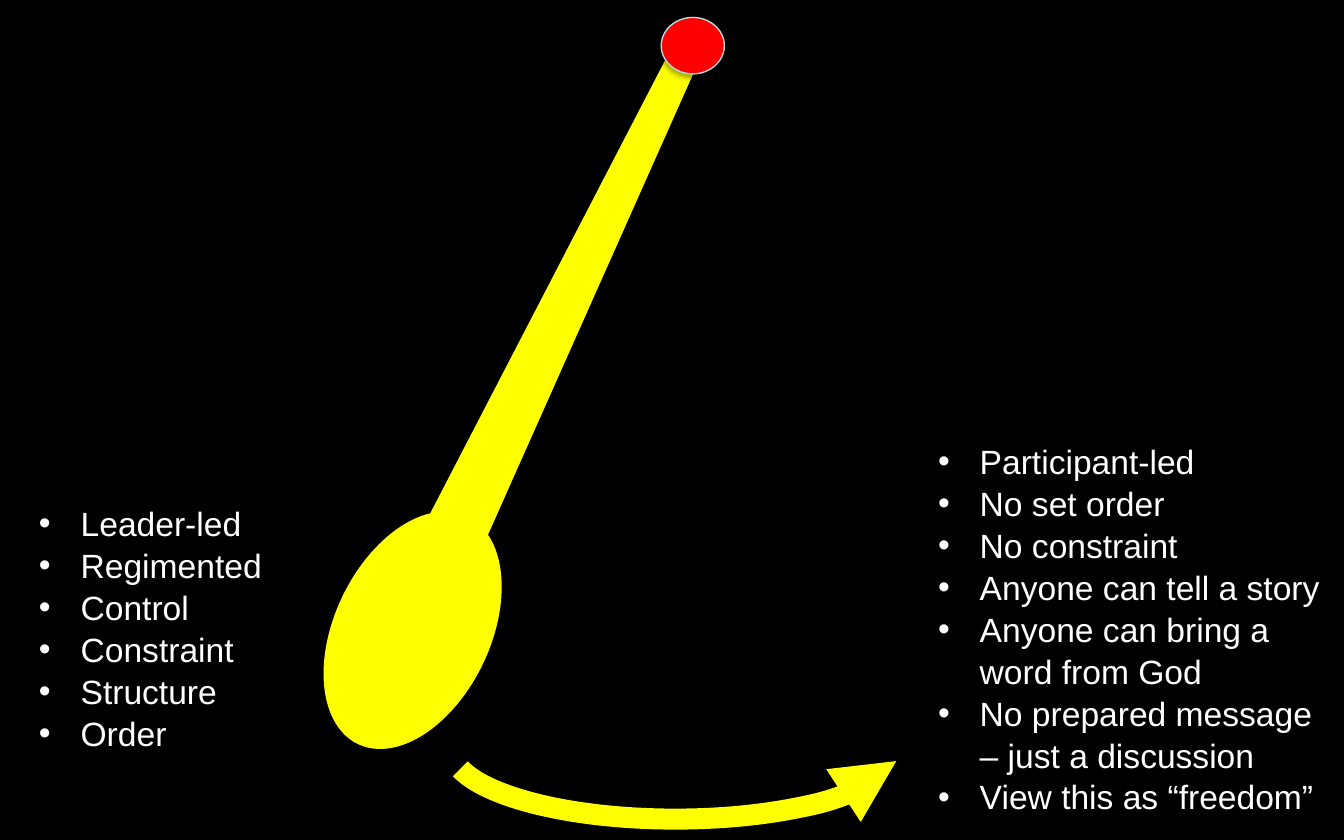
import pptx
import pptx.dml.color
import pptx.enum.shapes
import pptx.enum.text
import pptx.oxml
import pptx.oxml.ns
import pptx.util
import lxml.etree

Inches = pptx.util.Inches
Pt = pptx.util.Pt
SHAPES = pptx.enum.shapes.MSO_SHAPE

COLORS = {
    "background": "000000",
    "pendulum": "FFFF00",
    "pivot": "FF0000",
    "pivot_edge": "B6DCDF",
    "text": "FFFFFF",
}

LEADER_TRAITS = [
    "Leader-led",
    "Regimented",
    "Control",
    "Constraint",
    "Structure",
    "Order",
]
PARTICIPANT_TRAITS = [
    "Participant-led",
    "No set order",
    "No constraint",
    "Anyone can tell a story",
    "Anyone can bring a word from God",
    "No prepared message – just a discussion",
    "View this as “freedom”",
]
SWING_ANGLE = 25.7


def rgb(name):
    return pptx.dml.color.RGBColor.from_string(COLORS[name])


def write_bullet(paragraph, text, size=18, font="Arial", color="text", indent=0.31, spacing=1.04):
    properties = paragraph._p.get_or_add_pPr()
    properties.set("marL", str(Inches(indent)))
    properties.set("indent", str(-Inches(indent)))
    bullet_font = lxml.etree.SubElement(properties, pptx.oxml.ns.qn("a:buFont"))
    bullet_font.set("typeface", font)
    bullet = lxml.etree.SubElement(properties, pptx.oxml.ns.qn("a:buChar"))
    bullet.set("char", "•")
    paragraph.line_spacing = spacing
    paragraph.space_before = Pt(0)
    run = paragraph.add_run()
    run.text = text
    run.font.size = Pt(size)
    run.font.name = font
    run.font.color.rgb = rgb(color)


class PendulumSlide:
    def __init__(self, presentation):
        self.slide = presentation.slides.add_slide(presentation.slide_layouts[3])
        self.slide.background.fill.solid()
        self.slide.background.fill.fore_color.rgb = rgb("background")
        title = self.slide.shapes.title._element
        title.getparent().remove(title)

    def shape(self, kind, left, top, width, height, fill=None, line=None, weight=0.75, rotation=0):
        part = self.slide.shapes.add_shape(
            kind, Inches(left), Inches(top), Inches(width), Inches(height))
        part.shadow.inherit = False
        part.rotation = rotation
        if fill:
            part.fill.solid()
            part.fill.fore_color.rgb = rgb(fill)
        else:
            part.fill.background()
        if line:
            part.line.color.rgb = rgb(line)
            part.line.width = Pt(weight)
        else:
            part.line.fill.background()
        return part

    def drop_shadow(self, part, blur=3.1, distance=1.8, opacity=35):
        effects = part._element.spPr.find(pptx.oxml.ns.qn("a:effectLst"))
        effects.append(pptx.oxml.parse_xml(
            f'<a:outerShdw {pptx.oxml.ns.nsdecls("a")} blurRad="{Pt(blur)}" '
            f'dist="{Pt(distance)}" dir="5400000" rotWithShape="0">'
            f'<a:srgbClr val="000000"><a:alpha val="{opacity * 1000}"/></a:srgbClr>'
            '</a:outerShdw>'))

    def swing_arrow(self, left, top, width, height, start, end):
        arrow = self.shape(SHAPES.ARC, left, top, width, height,
                           line="pendulum", weight=11.25, rotation=90)
        arrow.adjustments[0] = start
        arrow.adjustments[1] = end
        head = lxml.etree.SubElement(arrow.line._get_or_add_ln(), pptx.oxml.ns.qn("a:headEnd"))
        head.set("type", "triangle")

    def traits(self, index, items, left, top, width, height):
        body = self.slide.placeholders[index]
        body.left, body.top = Inches(left), Inches(top)
        body.width, body.height = Inches(width), Inches(height)
        frame = body.text_frame
        frame.word_wrap = True
        frame.auto_size = pptx.enum.text.MSO_AUTO_SIZE.SHAPE_TO_FIT_TEXT
        for number, item in enumerate(items):
            paragraph = frame.add_paragraph() if number else frame.paragraphs[0]
            write_bullet(paragraph, item)


def main():
    presentation = pptx.Presentation()
    presentation.slide_width = Inches(10)
    presentation.slide_height = Inches(6.25)

    page = PendulumSlide(presentation)
    page.shape(SHAPES.OVAL, 2.49, 3.75, 1.16, 1.88, fill="pendulum", rotation=SWING_ANGLE)
    page.shape(SHAPES.TRAPEZOID, 4, 0.28, 0.46, 3.86, fill="pendulum", rotation=SWING_ANGLE)
    pivot = page.shape(SHAPES.OVAL, 4.92, 0.13, 0.47, 0.42, fill="pivot", line="pivot_edge")
    page.drop_shadow(pivot)
    page.traits(1, LEADER_TRAITS, 0.19, 3.68, 1.95, 1.92)
    page.traits(2, PARTICIPANT_TRAITS, 6.88, 3.22, 3.11, 2.83)
    page.swing_arrow(4.5, 3.9, 1.05, 3.34, start=163.95, end=50.77)

    presentation.save("out.pptx")


if __name__ == "__main__":
    main()
